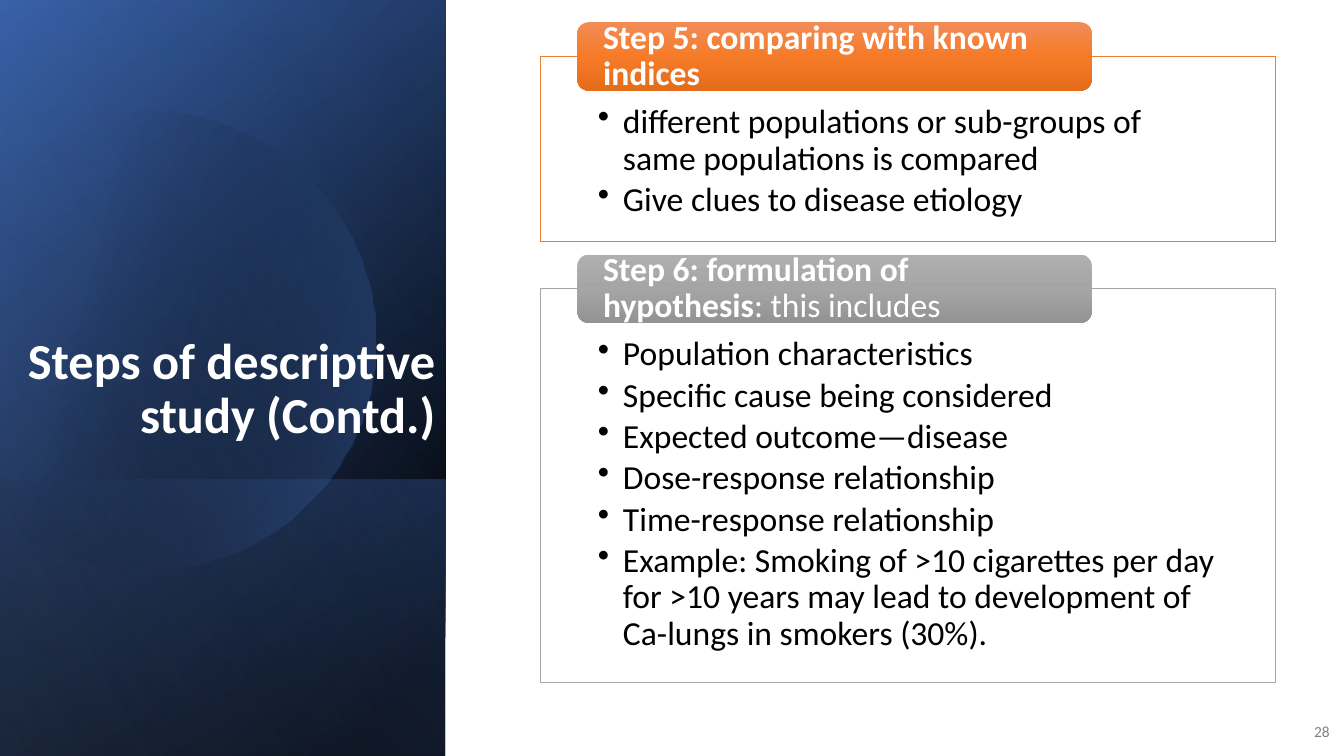
from math import cos, radians, sin

from pptx import Presentation
from pptx.dml.color import RGBColor
from pptx.enum.shapes import MSO_SHAPE
from pptx.enum.text import MSO_ANCHOR, PP_ALIGN
from pptx.oxml import parse_xml
from pptx.oxml.ns import nsdecls, qn
from pptx.util import Pt

FONT = "Calibri"
WHITE = RGBColor(0xFF, 0xFF, 0xFF)
BLACK = RGBColor(0x00, 0x00, 0x00)
GRAY = RGBColor(0x80, 0x80, 0x80)
NAVY = RGBColor(0x2F, 0x55, 0x97)
BLUE = RGBColor(0x44, 0x72, 0xC4)
PALE = RGBColor(0x8F, 0xAA, 0xDC)
ORANGE = RGBColor(0xED, 0x7D, 0x31)
SILVER = RGBColor(0xA5, 0xA5, 0xA5)
WARM = [(0, RGBColor(0xF1, 0x8C, 0x57), 100),
        (50, RGBColor(0xF6, 0x7B, 0x28), 100),
        (100, RGBColor(0xE5, 0x6C, 0x19), 100)]
COOL = [(0, RGBColor(0xAF, 0xAF, 0xAF), 100),
        (50, SILVER, 100),
        (100, RGBColor(0x93, 0x93, 0x93), 100)]

WIDE, HIGH = 960, 540
SIDE = 318.2


def shade(shape, stops, angle):
    shape.shadow.inherit = False
    shape.line.fill.background()
    shape.fill.background()
    marks = "".join(
        f'<a:gs pos="{pos * 1000}"><a:srgbClr val="{color}">'
        f'<a:alpha val="{alpha * 1000}"/></a:srgbClr></a:gs>'
        for pos, color, alpha in stops)
    grad = parse_xml(
        f'<a:gradFill {nsdecls("a")} rotWithShape="1"><a:gsLst>{marks}</a:gsLst>'
        f'<a:lin ang="{angle * 60000}" scaled="0"/></a:gradFill>')
    props = shape._element.spPr
    props.replace(props.find(qn("a:noFill")), grad)


def add_panel(slide, top, stops, angle):
    long = HIGH - top
    shape = slide.shapes.add_shape(
        MSO_SHAPE.RECTANGLE, Pt((SIDE - long) / 2), Pt(top + (long - SIDE) / 2),
        Pt(long), Pt(SIDE))
    shape.rotation = 90
    shape._element.spPr.find(qn("a:xfrm")).set("flipH", "1")
    shade(shape, stops, angle)


def add_disc(slide, x, y, radius, stops, angle):
    dots = [(x + radius * cos(radians(turn)), y + radius * sin(radians(turn)))
            for turn in range(-135, 136, 3)]
    form = slide.shapes.build_freeform(*dots[0], scale=Pt(1))
    form.add_line_segments(dots[1:], close=True)
    shade(form.convert_to_shape(), stops, angle)


def set_frame(shape, anchor, left=7.2, top=3.6, right=7.2, bottom=3.6):
    frame = shape.text_frame
    frame.word_wrap = True
    frame.vertical_anchor = anchor
    frame.margin_left, frame.margin_right = Pt(left), Pt(right)
    frame.margin_top, frame.margin_bottom = Pt(top), Pt(bottom)
    return frame


def style(para, size, color, bold=None, align=PP_ALIGN.LEFT, space=0.9):
    para.alignment = align
    para.line_spacing = space
    para.font.name = FONT
    para.font.size = Pt(size)
    para.font.bold = bold
    para.font.color.rgb = color


def add_note(slide, box, text, anchor, size, color, bold, space):
    shape = slide.shapes.add_textbox(*map(Pt, box))
    para = set_frame(shape, anchor).paragraphs[0]
    para.text = text
    style(para, size, color, bold, PP_ALIGN.RIGHT, space)


def add_point(para, text):
    para.text = text
    style(para, 24, BLACK)
    para.space_after = Pt(3.6)
    props = para._p.get_or_add_pPr()
    props.set("marL", str(Pt(18)))
    props.set("indent", str(-Pt(18)))
    bullet = parse_xml(f'<a:buChar {nsdecls("a")} char="•"/>')
    props.find(qn("a:spcAft")).addnext(bullet)


def add_card(slide, top, height, edge, stops, label, points):
    body = slide.shapes.add_shape(
        MSO_SHAPE.RECTANGLE, Pt(386), Pt(top), Pt(525), Pt(height))
    body.shadow.inherit = False
    body.fill.solid()
    body.fill.fore_color.rgb = WHITE
    body.line.color.rgb = edge
    body.line.width = Pt(0.5)
    frame = set_frame(body, MSO_ANCHOR.TOP, 41, 34.5, 41, 13.7)
    for index, text in enumerate(points):
        add_point(frame.add_paragraph() if index else frame.paragraphs[0], text)

    tab = slide.shapes.add_shape(
        MSO_SHAPE.ROUNDED_RECTANGLE, Pt(412.4), Pt(top - 24.4), Pt(367.4), Pt(48.8))
    shade(tab, stops, 90)
    para = set_frame(tab, MSO_ANCHOR.MIDDLE, 16, 0, 16, 0).paragraphs[0]
    style(para, 24, WHITE)
    for text, bold in label:
        run = para.add_run()
        run.text = text
        run.font.bold = bold


def main():
    deck = Presentation()
    deck.slide_width, deck.slide_height = Pt(WIDE), Pt(HIGH)
    slide = deck.slides.add_slide(deck.slide_layouts[6])

    add_panel(slide, 0, [(8, BLACK, 100), (100, NAVY, 100)], 50)
    add_panel(slide, 0, [(0, BLACK, 0), (99, BLUE, 46)], 30)
    add_panel(slide, 342.7, [(2, BLUE, 29), (100, BLACK, 30)], 130)
    add_disc(slide, 104.4, 243.4, 164, [(29, BLACK, 0), (100, BLUE, 43)], 14)
    add_panel(slide, 0, [(0, BLACK, 0), (99, PALE, 11)], 120)

    add_note(slide, (0, 132.5, SIDE, 188.6), "Steps of descriptive study (Contd.)",
             MSO_ANCHOR.BOTTOM, 36, WHITE, True, 0.9)
    add_note(slide, (921.6, 508.3, 35.3, 28.8), "28",
             MSO_ANCHOR.MIDDLE, 11, GRAY, False, 1.0)

    add_card(slide, 40.3, 132.5, ORANGE, WARM,
             [("Step 5: comparing with known indices", True)],
             ["different populations or sub-groups of same populations is compared",
              "Give clues to disease etiology"])
    add_card(slide, 206.2, 281.3, SILVER, COOL,
             [("Step 6: formulation of hypothesis", True), (": this includes", False)],
             ["Population characteristics",
              "Specific cause being considered",
              "Expected outcome—disease",
              "Dose-response relationship",
              "Time-response relationship",
              "Example: Smoking of >10 cigarettes per day for >10 years may lead to "
              "development of Ca-lungs in smokers (30%)."])

    deck.save("out.pptx")


if __name__ == "__main__":
    main()
